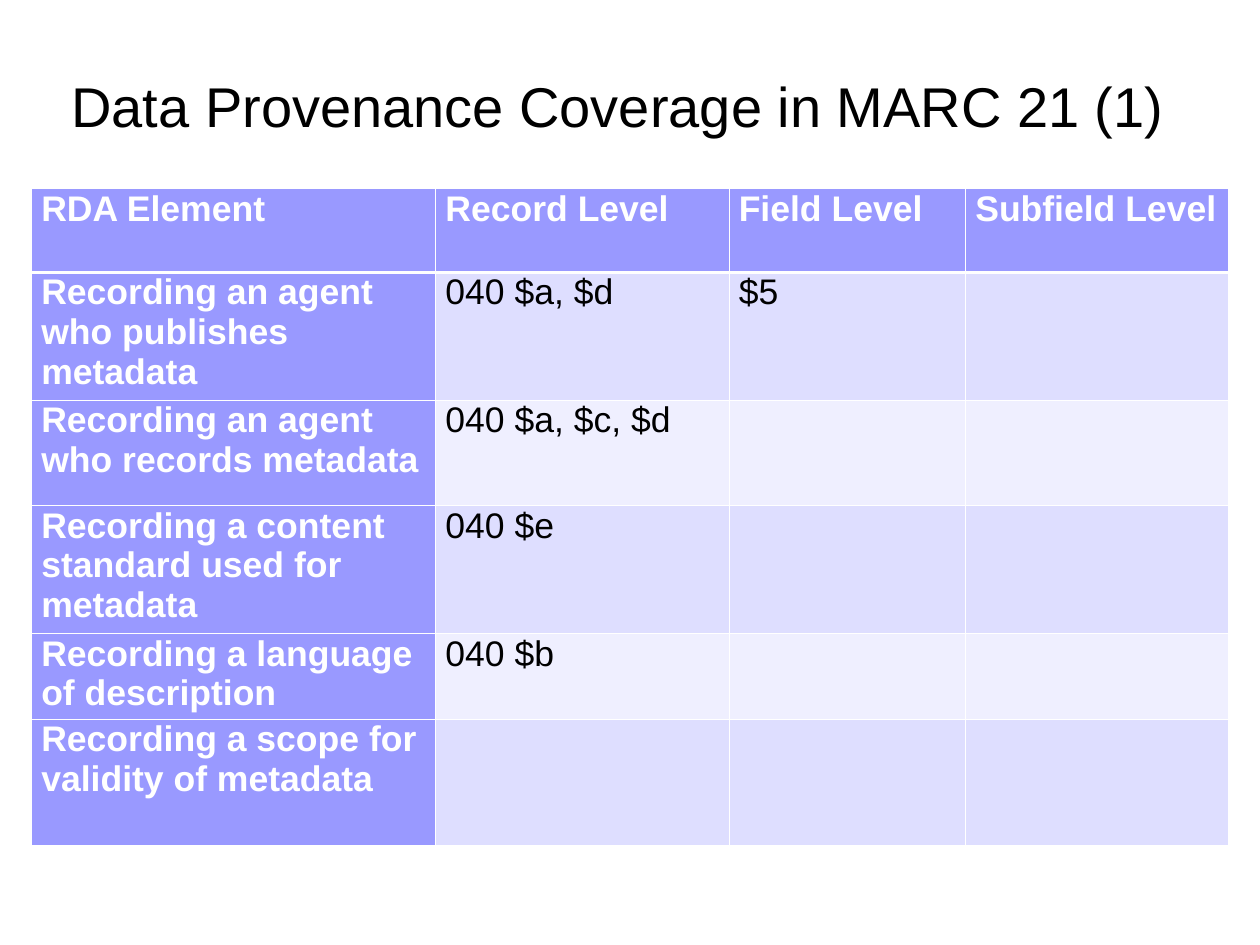
from lxml.etree import SubElement
from pptx import Presentation
from pptx.dml.color import RGBColor
from pptx.enum.text import MSO_ANCHOR, PP_ALIGN
from pptx.oxml.ns import qn
from pptx.util import Pt

WHITE = RGBColor(0xFF, 0xFF, 0xFF)
BLACK = RGBColor(0x00, 0x00, 0x00)
HEADING = RGBColor(0x99, 0x99, 0xFF)
BANDS = (RGBColor(0xDE, 0xDE, 0xFF), RGBColor(0xEF, 0xEF, 0xFF))
FONT = "Arial"

TITLE = "Data Provenance Coverage in MARC 21 (1)"
COLUMN_WIDTHS = (329.8, 239.4, 193, 214.2)
ROW_HEIGHTS = (68.4, 103, 85.8, 103, 68.4, 103)
ROWS = (
    ("RDA Element", "Record Level", "Field Level", "Subfield Level"),
    ("Recording an agent who publishes metadata", "040 $a, $d", "$5", ""),
    ("Recording an agent who records metadata", "040 $a, $c, $d", "", ""),
    ("Recording a content standard used for metadata", "040 $e", "", ""),
    ("Recording a language of description", "040 $b", "", ""),
    ("Recording a scope for validity of metadata", "", "", ""),
)


def add_run(paragraph, text, size, color, bold=False):
    """Add one formatted run to a paragraph."""
    run = paragraph.add_run()
    run.text = text
    run.font.name = FONT
    run.font.size = Pt(size)
    run.font.bold = bold
    run.font.color.rgb = color


def add_title(slide):
    """Add the slide heading."""
    box = slide.shapes.add_textbox(Pt(51.1), Pt(41.8), Pt(925.2), Pt(88))
    frame = box.text_frame
    frame.word_wrap = True
    frame.vertical_anchor = MSO_ANCHOR.MIDDLE
    add_run(frame.paragraphs[0], TITLE, 45.7, BLACK)


def set_borders(cell, widths):
    """Draw white cell borders with a width in points for each side."""
    properties = cell._tc.get_or_add_tcPr()
    for side, width in widths.items():
        line = SubElement(properties, qn(f"a:ln{side}"), w=str(Pt(width)))
        fill = SubElement(line, qn("a:solidFill"))
        SubElement(fill, qn("a:srgbClr"), val=str(WHITE))


def format_cell(cell, text, row, column):
    """Fill one cell according to its place in the table."""
    is_heading = row == 0 or column == 0
    set_borders(cell, {"L": 1, "R": 1, "T": 3 if row == 1 else 1, "B": 3 if row == 0 else 1})
    cell.fill.solid()
    cell.fill.fore_color.rgb = HEADING if is_heading else BANDS[(row - 1) % 2]
    cell.margin_left = cell.margin_right = Pt(7.8)
    cell.margin_top = cell.margin_bottom = Pt(0)
    if text:
        paragraph = cell.text_frame.paragraphs[0]
        is_label = column == 0 and row > 0
        paragraph.alignment = PP_ALIGN.LEFT if is_label or column == 3 else PP_ALIGN.JUSTIFY
        add_run(paragraph, text, 29, WHITE if is_heading else BLACK, is_heading)


def add_coverage_table(slide):
    """Add the table of RDA elements and MARC levels."""
    frame = slide.shapes.add_table(
        len(ROWS), len(COLUMN_WIDTHS), Pt(25.9), Pt(154.1),
        Pt(sum(COLUMN_WIDTHS)), Pt(sum(ROW_HEIGHTS)),
    )
    table = frame.table
    table.first_col = True
    for column, width in zip(table.columns, COLUMN_WIDTHS):
        column.width = Pt(width)
    for row, height in zip(table.rows, ROW_HEIGHTS):
        row.height = Pt(height)
    for row, texts in enumerate(ROWS):
        for column, text in enumerate(texts):
            format_cell(table.cell(row, column), text, row, column)


def main():
    """Build and save the slide."""
    presentation = Presentation()
    presentation.slide_width = Pt(1028.16)
    presentation.slide_height = Pt(771.12)
    slide = presentation.slides.add_slide(presentation.slide_layouts[6])
    add_title(slide)
    add_coverage_table(slide)
    presentation.save("out.pptx")


if __name__ == "__main__":
    main()
